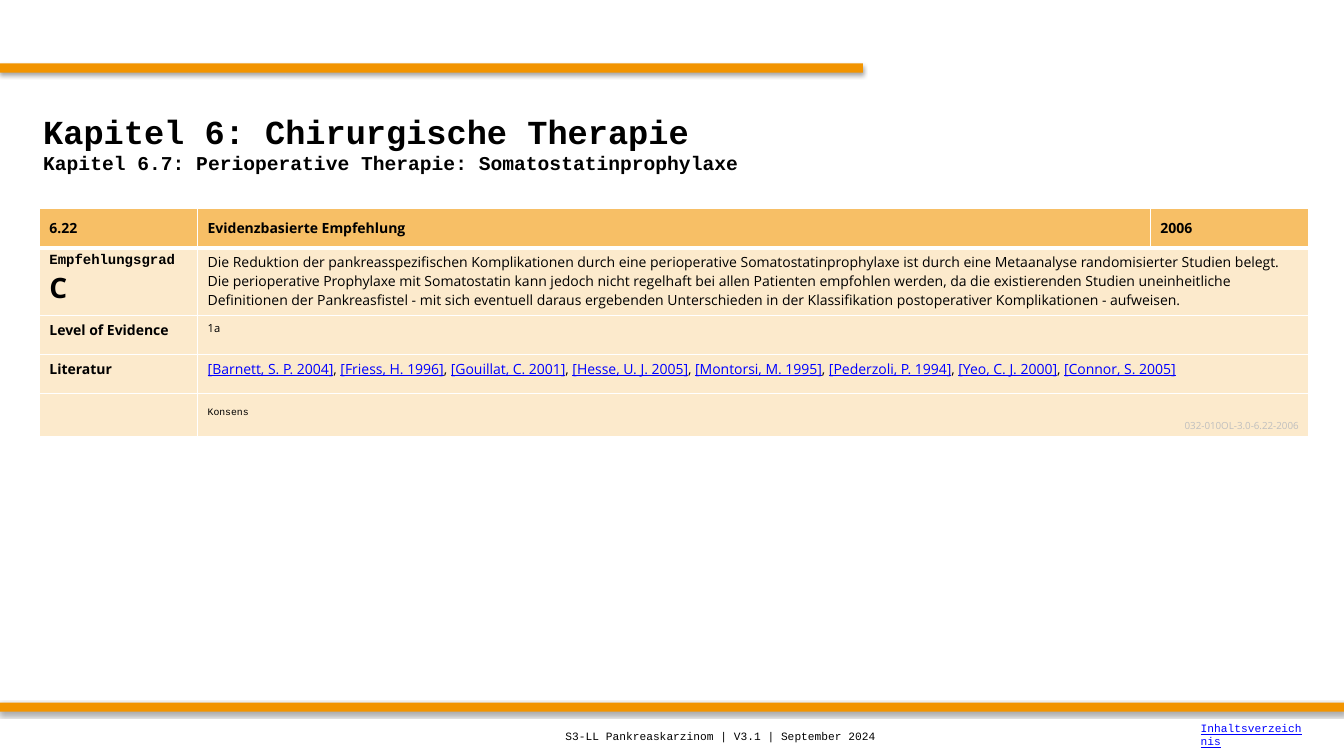
from typing import NamedTuple

from lxml import etree
from pptx import Presentation
from pptx import util as u
from pptx.dml.color import RGBColor
from pptx.enum import shapes, text
from pptx.oxml import ns, parse_xml

WIDE, HIGH = 13.33, 7.5
MONO, SANS = "Courier New", "Open Sans"
BLACK, BLUE, GREY, WHITE = "000000", "0000FF", "BFBFBF", "FFFFFF"
ORANGE, HEAD, BODY = "F29400", "F7BF66", "FCEACC"
MID, TOP, LOW = text.MSO_ANCHOR.MIDDLE, text.MSO_ANCHOR.TOP, text.MSO_ANCHOR.BOTTOM


class Run(NamedTuple):
    text: str
    size: float = 10
    font: str = SANS
    color: str = BLACK
    bold: bool = False
    line: bool = False


class Para(NamedTuple):
    runs: list[Run]
    right: bool = False


class Area(NamedTuple):
    """Left, top, width and height as shares of the slide."""
    x: float
    y: float
    w: float
    h: float

    def place(self) -> list[int]:
        sizes = (WIDE, HIGH, WIDE, HIGH)
        return [u.Inches(share * size) for share, size in zip(self, sizes)]


class Label(NamedTuple):
    area: Area
    paras: list[Para]


class Cell(NamedTuple):
    paras: list[Para]
    anchor: text.MSO_ANCHOR = TOP


def paint(color: str) -> RGBColor:
    return RGBColor.from_string(color)


def line(words: str, right: bool = False, **form) -> Para:
    return Para([Run(words, **form)], right)


def write(frame, paras: list[Para]) -> None:
    for i, item in enumerate(paras):
        para = frame.add_paragraph() if i else frame.paragraphs[0]
        para.alignment = text.PP_ALIGN.RIGHT if item.right else text.PP_ALIGN.LEFT
        for part in item.runs:
            run = para.add_run()
            run.text = part.text
            font = run.font
            font.size, font.name = u.Pt(part.size), part.font
            font.bold, font.underline = part.bold, part.line
            font.color.rgb = paint(part.color)


def draw_bar(slide, area: Area) -> None:
    bar = slide.shapes.add_shape(shapes.MSO_SHAPE.RECTANGLE, *area.place())
    bar.fill.solid()
    bar.fill.fore_color.rgb = paint(ORANGE)
    bar.line.fill.background()
    bar.shadow.inherit = False
    glow = bar.element.spPr.find(ns.qn("a:effectLst"))
    glow.append(parse_xml(
        f'<a:outerShdw {ns.nsdecls("a")} blurRad="{u.Pt(3.1)}" dist="{u.Pt(1.8)}" '
        f'dir="5400000" rotWithShape="0"><a:srgbClr val="{BLACK}">'
        '<a:alpha val="35000"/></a:srgbClr></a:outerShdw>'))


def draw_label(slide, label: Label) -> None:
    frame = slide.shapes.add_textbox(*label.area.place()).text_frame
    frame.word_wrap = True
    frame.vertical_anchor = MID
    write(frame, label.paras)


def edge(cell, row: int) -> None:
    widths = {"L": 1, "R": 1, "T": 3 if row == 1 else 1, "B": 1 if row else 3}
    props = cell._tc.get_or_add_tcPr()
    for i, (side, width) in enumerate(widths.items()):
        rule = etree.Element(ns.qn(f"a:ln{side}"), w=str(u.Pt(width)))
        fill = etree.SubElement(rule, ns.qn("a:solidFill"))
        etree.SubElement(fill, ns.qn("a:srgbClr"), val=WHITE)
        props.insert(i, rule)


def draw_table(slide, area: Area, rows: list[list[Cell]],
               cols: list[float], highs: list[float]) -> None:
    grid = slide.shapes.add_table(len(rows), len(cols), *area.place()).table
    for col, width in zip(grid.columns, cols):
        col.width = u.Inches(width)
    for row, high in zip(grid.rows, highs):
        row.height = u.Inches(high)
    for r, items in enumerate(rows):
        for c in range(len(cols)):
            cell = grid.cell(r, c)
            cell.fill.solid()
            cell.fill.fore_color.rgb = paint(BODY if r else HEAD)
            edge(cell, r)
        if len(items) < len(cols):
            grid.cell(r, len(items) - 1).merge(grid.cell(r, len(cols) - 1))
        for c, item in enumerate(items):
            grid.cell(r, c).vertical_anchor = item.anchor
            write(grid.cell(r, c).text_frame, item.paras)


# Content
ADVICE = (
    "Die Reduktion der pankreasspezifischen Komplikationen durch eine perioperative "
    "Somatostatinprophylaxe ist durch eine Metaanalyse randomisierter Studien belegt. "
    "Die perioperative Prophylaxe mit Somatostatin kann jedoch nicht regelhaft bei allen "
    "Patienten empfohlen werden, da die existierenden Studien uneinheitliche Definitionen "
    "der Pankreasfistel - mit sich eventuell daraus ergebenden Unterschieden in der "
    "Klassifikation postoperativer Komplikationen - aufweisen.")
WORKS = ["Barnett, S. P. 2004", "Friess, H. 1996", "Gouillat, C. 2001",
         "Hesse, U. J. 2005", "Montorsi, M. 1995", "Pederzoli, P. 1994",
         "Yeo, C. J. 2000", "Connor, S. 2005"]
CITES = [run for work in WORKS
         for run in (Run(", "), Run(f"[{work}]", color=BLUE, line=True))][1:]

ROWS = [
    [Cell([line(words, bold=True)], MID)
     for words in ("6.22", "Evidenzbasierte Empfehlung", "2006")],
    [Cell([line("Empfehlungsgrad", font=MONO, bold=True), line("C", size=20, bold=True)]),
     Cell([line(ADVICE)])],
    [Cell([line("Level of Evidence", bold=True)]), Cell([line("1a", size=8)])],
    [Cell([line("Literatur", bold=True)]), Cell([Para(CITES)])],
    [Cell([]),
     Cell([line("Konsens", size=7, font=MONO),
           line("032-010OL-3.0-6.22-2006", right=True, size=7, color=GREY)], LOW)],
]

BARS = [Area(0, 0.63 / HIGH, 8.56 / WIDE, 0.09 / HIGH),
        Area(0, 6.97 / HIGH, 1, 0.09 / HIGH)]
LABELS = [
    Label(Area(0.33 / WIDE, 0.83 / HIGH, 0.95, 1.17 / HIGH),
          [line("Kapitel 6: Chirurgische Therapie", size=24, font=MONO, bold=True),
           line("Kapitel 6.7: Perioperative Therapie: Somatostatinprophylaxe",
                size=14, font=MONO, bold=True)]),
    Label(Area(5.51 / WIDE, 7.11 / HIGH, 5.51 / WIDE, 0.39 / HIGH),
          [line("S3-LL Pankreaskarzinom | V3.1 | September 2024", size=8, font=MONO)]),
    Label(Area(11.81 / WIDE, 7.09 / HIGH, 1.22 / WIDE, 0.39 / HIGH),
          [line("Inhaltsverzeichnis", size=8, font=MONO, color=BLUE, line=True)]),
]


def main() -> None:
    deck = Presentation()
    deck.slide_width, deck.slide_height = u.Inches(WIDE), u.Inches(HIGH)
    slide = deck.slides.add_slide(deck.slide_layouts[6])
    # Bars above and below
    for area in BARS:
        draw_bar(slide, area)
    # Recommendation table
    draw_table(slide, Area(0.39 / WIDE, 2.07 / HIGH, 12.6 / WIDE, 2.27 / HIGH),
               ROWS, [1.57, 9.45, 1.57], [0.39, 0.66, 0.39, 0.39, 0.43])
    # Title and footer
    for label in LABELS:
        draw_label(slide, label)
    deck.save("out.pptx")


if __name__ == "__main__":
    main()
